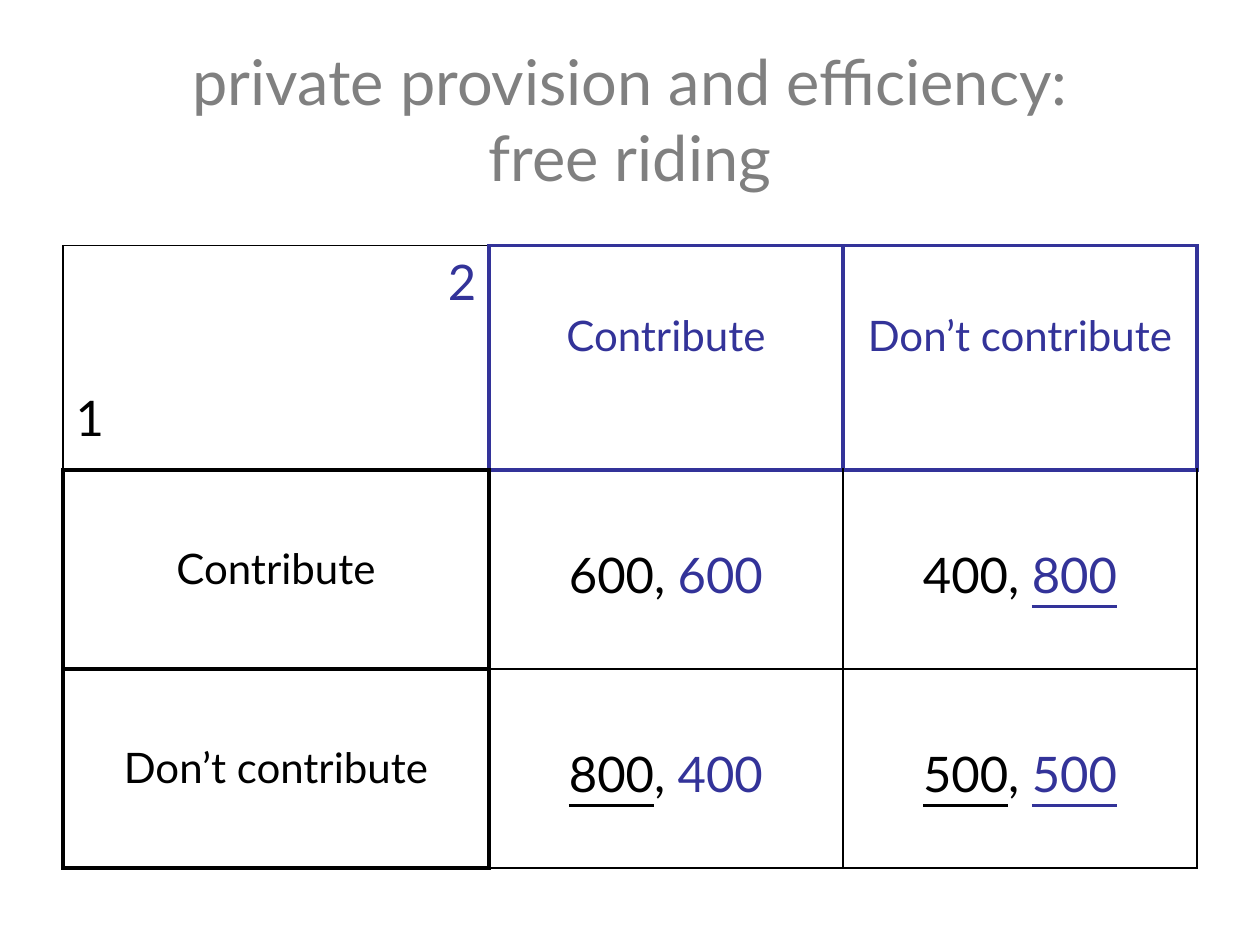
from dataclasses import dataclass
from typing import Any

from lxml.etree import SubElement
from pptx import Presentation
from pptx.dml.color import RGBColor
from pptx.enum.text import MSO_ANCHOR as Anchor, MSO_AUTO_SIZE as AutoSize, PP_ALIGN as Align
from pptx.oxml.ns import qn
from pptx.util import Inches, Pt

BLACK, BLUE, GREY = "000000", "333399", "808080"
THIN, THICK = 1, 2.25
TITLE_LAYOUT = 5


def colour(code):
    return RGBColor.from_string(code)


@dataclass
class GameSlide:
    deck: Any
    page: Any
    font: str = "Lato"

    def area(self, left, top, width, height):
        """Turn shares of the slide's size into lengths."""
        across, down = self.deck.slide_width, self.deck.slide_height
        return (round(left * across), round(top * down),
                round(width * across), round(height * down))

    def add_spans(self, para, spans, size, align=Align.CENTER, before=0):
        """Fill a paragraph from (text, colour, underlined) spans."""
        para.alignment = align
        para.space_before = Pt(before)
        for text, code, underlined in spans:
            span = para.add_run()
            span.text = text
            span.font.name = self.font
            span.font.size = Pt(size)
            span.font.bold = False
            span.font.underline = underlined
            span.font.color.rgb = colour(code)

    def title(self, lines, *shares):
        box = self.page.shapes.title
        box.left, box.top, box.width, box.height = self.area(*shares)
        frame = box.text_frame
        frame.word_wrap = True
        frame.auto_size = AutoSize.NONE
        frame.vertical_anchor = Anchor.MIDDLE
        for index, line in enumerate(lines):
            para = frame.add_paragraph() if index else frame.paragraphs[0]
            self.add_spans(para, [(line, GREY, False)], 36)

    def table(self, columns, rows, *shares):
        grid = self.page.shapes.add_table(len(rows), len(columns), *self.area(*shares)).table
        grid.first_row = grid.horz_banding = False
        for column, width in zip(grid.columns, columns):
            column.width = Inches(width)
        for row, height in zip(grid.rows, rows):
            row.height = Inches(height)
        return grid

    def cell(self, cell, spans, size, drop, borders):
        """Place one line of text, drop inches below the cell's top."""
        cell.fill.background()
        cell.vertical_anchor = Anchor.TOP
        cell.margin_top = Inches(drop)
        self.add_spans(cell.text_frame.paragraphs[0], spans, size)
        self.borders(cell, borders)

    def borders(self, cell, borders):
        """Draw the left, right, top and bottom lines, in that order."""
        properties = cell._tc.get_or_add_tcPr()
        for index, (side, (code, width)) in enumerate(zip("LRTB", borders)):
            line = SubElement(properties, qn(f"a:ln{side}"), w=str(Pt(width)))
            fill = SubElement(line, qn("a:solidFill"))
            SubElement(fill, qn("a:srgbClr"), val=code)
            properties.insert(index, line)


def main():
    deck = Presentation()
    deck.slide_width, deck.slide_height = Inches(10), Inches(7.5)
    slide = GameSlide(deck, deck.slides.add_slide(deck.slide_layouts[TITLE_LAYOUT]))
    slide.title(["private provision and efficiency:", "free riding"], 0.05, 0.04, 0.9, 0.17)

    # Payoff matrix: strategies of player 1 down, of player 2 across
    grid = slide.table([3.38, 2.81, 2.81], [1.78, 1.58, 1.58], 0.05, 0.26, 0.9, 0.66)
    strategies = ["Contribute", "Don’t contribute"]
    thin, thick, blue = (BLACK, THIN), (BLACK, THICK), (BLUE, THICK)

    # Corner with the two players
    corner = grid.cell(0, 0)
    slide.cell(corner, [("2", BLUE, False)], 28, 0.05, [thin, blue, thin, thick])
    corner.text_frame.paragraphs[0].alignment = Align.RIGHT
    slide.add_spans(corner.text_frame.add_paragraph(), [("1", BLACK, False)], 28, Align.LEFT, 44)

    # Strategy headings
    for index, name in enumerate(strategies, start=1):
        slide.cell(grid.cell(0, index), [(name, BLUE, False)], 24, 0.51, [blue] * 4)
        slide.cell(grid.cell(index, 0), [(name, BLACK, False)], 24, 0.58, [thick] * 4)

    # Payoffs, with each player's best replies underlined
    payoffs = [[(600, 600), (400, 800)],
               [(800, 400), (500, 500)]]
    for row, pairs in enumerate(payoffs):
        for column, (first, second) in enumerate(pairs):
            best_first = first == max(other[column][0] for other in payoffs)
            best_second = second == max(pair[1] for pair in pairs)
            spans = [(str(first), BLACK, best_first), (", ", BLACK, False),
                     (str(second), BLUE, best_second)]
            borders = [thin if column else thick, thin, thin if row else blue, thin]
            slide.cell(grid.cell(row + 1, column + 1), spans, 28, 0.6, borders)

    deck.save("out.pptx")


if __name__ == "__main__":
    main()
